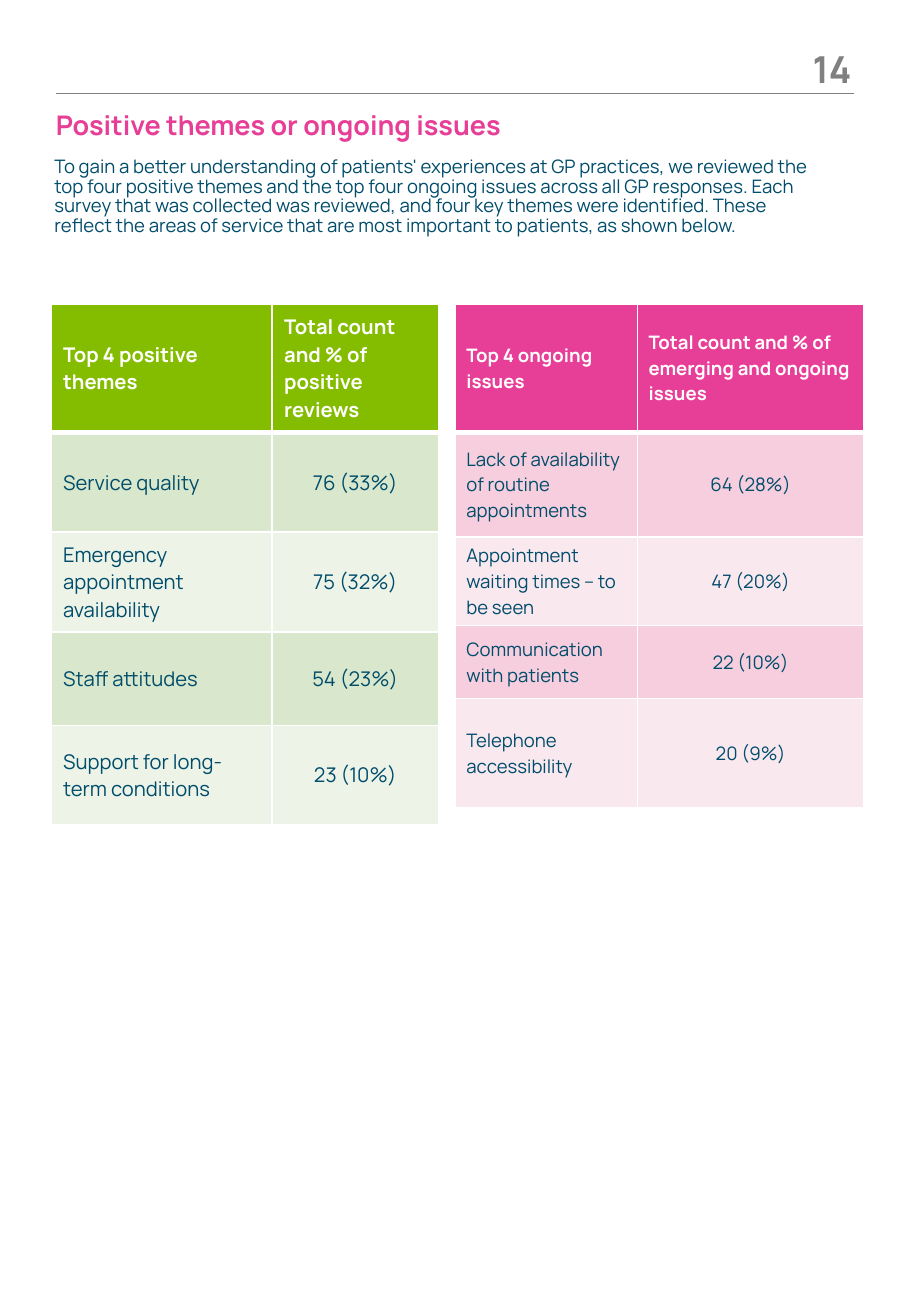
from lxml.etree import SubElement
from pptx import Presentation
from pptx.dml.color import RGBColor
from pptx.enum.shapes import MSO_CONNECTOR
from pptx.enum.text import MSO_ANCHOR, PP_ALIGN
from pptx.oxml import parse_xml
from pptx.oxml.ns import qn, nsdecls
from pptx.util import Inches, Pt

NAVY, PINK, GREY, WHITE = "004C6B", "E73E97", "808080", "FFFFFF"
INTRO = (
    "To gain a better understanding of patients' experiences at GP practices, "
    "we reviewed the top four positive themes and the top four ongoing issues "
    "across all GP responses. Each survey that was collected was reviewed, and "
    "four key themes were identified. These reflect the areas of service that "
    "are most important to patients, as shown below."
)
GOOD = [
    ("Top 4 positive themes", "Total count and % of positive reviews"),
    ("Service quality", "76 (33%)"),
    ("Emergency appointment availability", "75 (32%)"),
    ("Staff attitudes", "54 (23%)"),
    ("Support for long-term conditions", "23 (10%)"),
]
ISSUES = [
    ("Top 4 ongoing issues", "Total count and % of emerging and ongoing issues"),
    ("Lack of availability of routine appointments", "64 (28%)"),
    ("Appointment waiting times – to be seen", "47 (20%)"),
    ("Communication with patients", "22 (10%)"),
    ("Telephone accessibility", "20 (9%)"),
]


def color(code):
    return RGBColor.from_string(code)


def write(frame, text, size, code, bold=False, align=PP_ALIGN.LEFT, pitch=None):
    para = frame.paragraphs[0]
    para.alignment = align
    if pitch:
        para.line_spacing = pitch
    run = para.add_run()
    run.text = text
    looks = {"name": "Manrope", "size": Pt(size), "bold": bold}
    for key, value in looks.items():
        setattr(run.font, key, value)
    run.font.color.rgb = color(code)


def add_text(slide, box, text, size, code, inset=(0, 0), **style):
    frame = slide.shapes.add_textbox(*map(Inches, box)).text_frame
    side, edge = map(Inches, inset)
    looks = {"word_wrap": True, "margin_left": side, "margin_right": side,
             "margin_top": edge, "margin_bottom": edge}
    for key, value in looks.items():
        setattr(frame, key, value)
    write(frame, text, size, code, **style)


def add_edges(cell, widths):
    props = cell._tc.get_or_add_tcPr()
    for spot, (side, width) in enumerate(zip("LRTB", widths)):
        edge = parse_xml(f'<a:ln{side} {nsdecls("a")} w="{Pt(width)}"/>')
        fill = SubElement(edge, qn("a:solidFill"))
        SubElement(fill, qn("a:srgbClr"), val=WHITE)
        props.insert(spot, edge)


def add_head(slide, box):
    left, top, width, height = box
    base = top + height
    rule = slide.shapes.add_connector(
        MSO_CONNECTOR.STRAIGHT, Inches(left), Inches(base),
        Inches(left + width), Inches(base))
    rule.line.color.rgb = color(GREY)
    rule.line.width = Pt(0.75)
    SubElement(rule._element.spPr, qn("a:effectLst"))
    add_text(slide, (left + width - 0.66, top, 0.64, height), "14", 22, GREY,
             bold=True, align=PP_ALIGN.RIGHT)


def add_intro(slide, box):
    left, top, width, height = box
    add_text(slide, (left + 0.11, top, width, 0.34),
             "Positive themes or ongoing issues", 16, PINK, bold=True)
    add_text(slide, (left, top + 0.36, width - 0.06, height - 0.36), INTRO,
             11, NAVY, inset=(0.1, 0.05), pitch=0.88)


def add_themes(slide, box, data, cols, rows, fills, size, inset):
    frame = slide.shapes.add_table(len(rows), len(cols), *map(Inches, box))
    table = frame.table
    table.first_row = table.horz_banding = False
    for col, width in zip(table.columns, cols):
        col.width = Inches(width)
    for row, height in zip(table.rows, rows):
        row.height = Inches(height)
    head, dark, pale = fills
    looks = {"margin_left": Inches(inset), "margin_right": Inches(inset),
             "margin_top": Inches(0.05), "margin_bottom": Inches(0.05),
             "vertical_anchor": MSO_ANCHOR.MIDDLE}
    for r, line in enumerate(data):
        top = r == 0
        shade = head if top else (dark if r % 2 else pale)
        for c, text in enumerate(line):
            cell = table.cell(r, c)
            for key, value in looks.items():
                setattr(cell, key, value)
            cell.fill.solid()
            cell.fill.fore_color.rgb = color(shade)
            align = PP_ALIGN.CENTER if c and not top else PP_ALIGN.LEFT
            write(cell.text_frame, text, size, WHITE if top else NAVY,
                  bold=top, align=align)
            add_edges(cell, (1, 1, 3 if r == 1 else 1, 3 if top else 1))


def main():
    deck = Presentation()
    deck.slide_width, deck.slide_height = Inches(7.5), Inches(10.83)
    slide = deck.slides.add_slide(deck.slide_layouts[6])
    add_head(slide, (0.46, 0.38, 6.57, 0.39))
    add_intro(slide, (0.35, 0.89, 6.6, 1.39))
    add_themes(slide, (0.42, 2.5, 3.19, 4.29), GOOD, (1.82, 1.37),
               (1.06, 0.82, 0.82, 0.77, 0.82),
               ("84BD00", "D9E8CC", "EDF4E7"), 12, 0.1)
    add_themes(slide, (3.75, 2.5, 3.36, 4.15), ISSUES, (1.5, 1.86),
               (1.06, 0.86, 0.73, 0.6, 0.9),
               (PINK, "F6CEDD", "FAE8EF"), 11, 0.09)
    deck.save("out.pptx")


if __name__ == "__main__":
    main()
